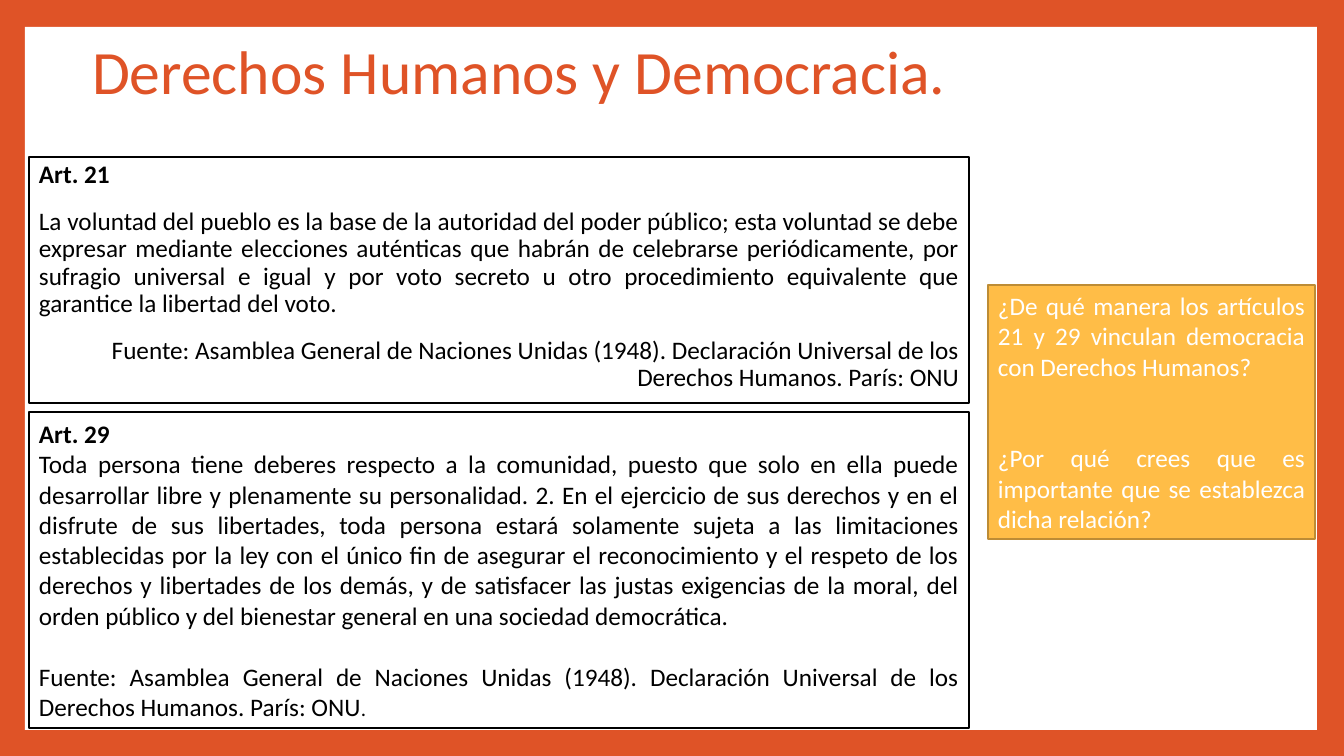
"""Builds the slide on human rights and democracy."""
from pptx import Presentation
from pptx.dml.color import RGBColor
from pptx.enum.shapes import MSO_SHAPE
from pptx.enum.text import MSO_ANCHOR, MSO_AUTO_SIZE, PP_ALIGN
from pptx.util import Emu, Pt

RECT = MSO_SHAPE.RECTANGLE
TOP, MIDDLE = MSO_ANCHOR.TOP, MSO_ANCHOR.MIDDLE
NO_FIT = MSO_AUTO_SIZE.NONE
LEFT, RIGHT, JUSTIFY = PP_ALIGN.LEFT, PP_ALIGN.RIGHT, PP_ALIGN.JUSTIFY

ORANGE = RGBColor(0xDF, 0x53, 0x27)
AMBER = RGBColor(0xFF, 0xBD, 0x47)
BROWN = RGBColor(0xBD, 0x8C, 0x35)
WHITE = RGBColor(0xFF, 0xFF, 0xFF)
BLACK = RGBColor(0x00, 0x00, 0x00)

FONT = "Calibri"
BODY_SIZE = 18
STOP_SIZE = 15
LINE = 22
PX = 914400 / 100.8

TITLE = "Derechos Humanos y Democracia."
SOURCE = ("Fuente: Asamblea General de Naciones Unidas (1948). "
          "Declaración Universal de los Derechos Humanos. París: ONU")
TITLE_BOX = (82, 0, 1089, 149)
PANEL_BOX = (25, 27, 1292, 703)

BOXES = [
    {"box": (29, 157, 940, 246), "fill": WHITE, "line": BLACK,
     "color": BLACK, "anchor": TOP, "spacing": 0.9,
     "paragraphs": [
         ("Art. 21", True, LEFT, 0),
         ("La voluntad del pueblo es la base de la autoridad del poder "
          "público; esta voluntad se debe expresar mediante elecciones "
          "auténticas que habrán de celebrarse periódicamente, por sufragio "
          "universal e igual y por voto secreto u otro procedimiento "
          "equivalente que garantice la libertad del voto.",
          False, JUSTIFY, 14),
         (SOURCE, False, RIGHT, 14)]},
    {"box": (29, 412, 940, 316), "fill": WHITE, "line": BLACK,
     "color": BLACK, "anchor": MIDDLE, "spacing": 1.0, "stop": ".",
     "paragraphs": [
         ("Art. 29", True, JUSTIFY, 0),
         ("Toda persona tiene deberes respecto a la comunidad, puesto que "
          "solo en ella puede desarrollar libre y plenamente su "
          "personalidad. 2. En el ejercicio de sus derechos y en el disfrute "
          "de sus libertades, toda persona estará solamente sujeta a las "
          "limitaciones establecidas por la ley con el único fin de asegurar "
          "el reconocimiento y el respeto de los derechos y libertades de "
          "los demás, y de satisfacer las justas exigencias de la moral, del "
          "orden público y del bienestar general en una sociedad "
          "democrática.", False, JUSTIFY, 0),
         (SOURCE, False, JUSTIFY, LINE)]},
    {"box": (988, 285, 327, 254), "fill": AMBER, "line": BROWN,
     "color": WHITE, "anchor": MIDDLE, "spacing": 1.0,
     "paragraphs": [
         ("¿De qué manera los artículos 21 y 29 vinculan democracia con "
          "Derechos Humanos?", False, JUSTIFY, 0),
         ("¿Por qué crees que es importante que se establezca dicha "
          "relación?", False, JUSTIFY, 2 * LINE)]},
]


def place(box):
    return [Emu(round(v * PX)) for v in box]


def format_run(r, size, color, bold=False):
    r.font.name = FONT
    r.font.size = Pt(size)
    r.font.bold = bold
    r.font.color.rgb = color


def add_rect(s, box, fill, line=None):
    sp = s.shapes.add_shape(RECT, *place(box))
    sp.shadow.inherit = False
    sp.fill.solid()
    sp.fill.fore_color.rgb = fill
    if line is None:
        sp.line.fill.background()
    else:
        sp.line.color.rgb = line
        sp.line.width = Pt(1.5)
    return sp


def add_title(s):
    title = s.shapes.title
    title.left, title.top, title.width, title.height = place(TITLE_BOX)
    tf = title.text_frame
    tf.text = TITLE
    tf.auto_size = NO_FIT
    tf.vertical_anchor = MIDDLE
    p = tf.paragraphs[0]
    p.alignment = LEFT
    p.line_spacing = 0.9
    format_run(p.runs[0], 44, ORANGE)
    return title


def add_text_box(s, item):
    sp = add_rect(s, item["box"], item["fill"], item["line"])
    tf = sp.text_frame
    tf.word_wrap = True
    tf.vertical_anchor = item["anchor"]
    tf.text = "\n".join(text for text, *_ in item["paragraphs"])
    for p, (_, bold, align, before) in zip(tf.paragraphs, item["paragraphs"]):
        p.alignment = align
        p.line_spacing = item["spacing"]
        p.space_before = Pt(before)
        format_run(p.runs[0], BODY_SIZE, item["color"], bold)
    if "stop" in item:
        r = tf.paragraphs[-1].add_run()
        r.text = item["stop"]
        format_run(r, STOP_SIZE, item["color"])


def main():
    prs = Presentation()
    prs.slide_width, prs.slide_height = place((1344, 756))
    s = prs.slides.add_slide(prs.slide_layouts[5])
    s.background.fill.solid()
    s.background.fill.fore_color.rgb = ORANGE
    panel = add_rect(s, PANEL_BOX, WHITE)
    title = add_title(s)
    title.element.addprevious(panel.element)
    for item in BOXES:
        add_text_box(s, item)
    prs.save("out.pptx")


if __name__ == "__main__":
    main()
